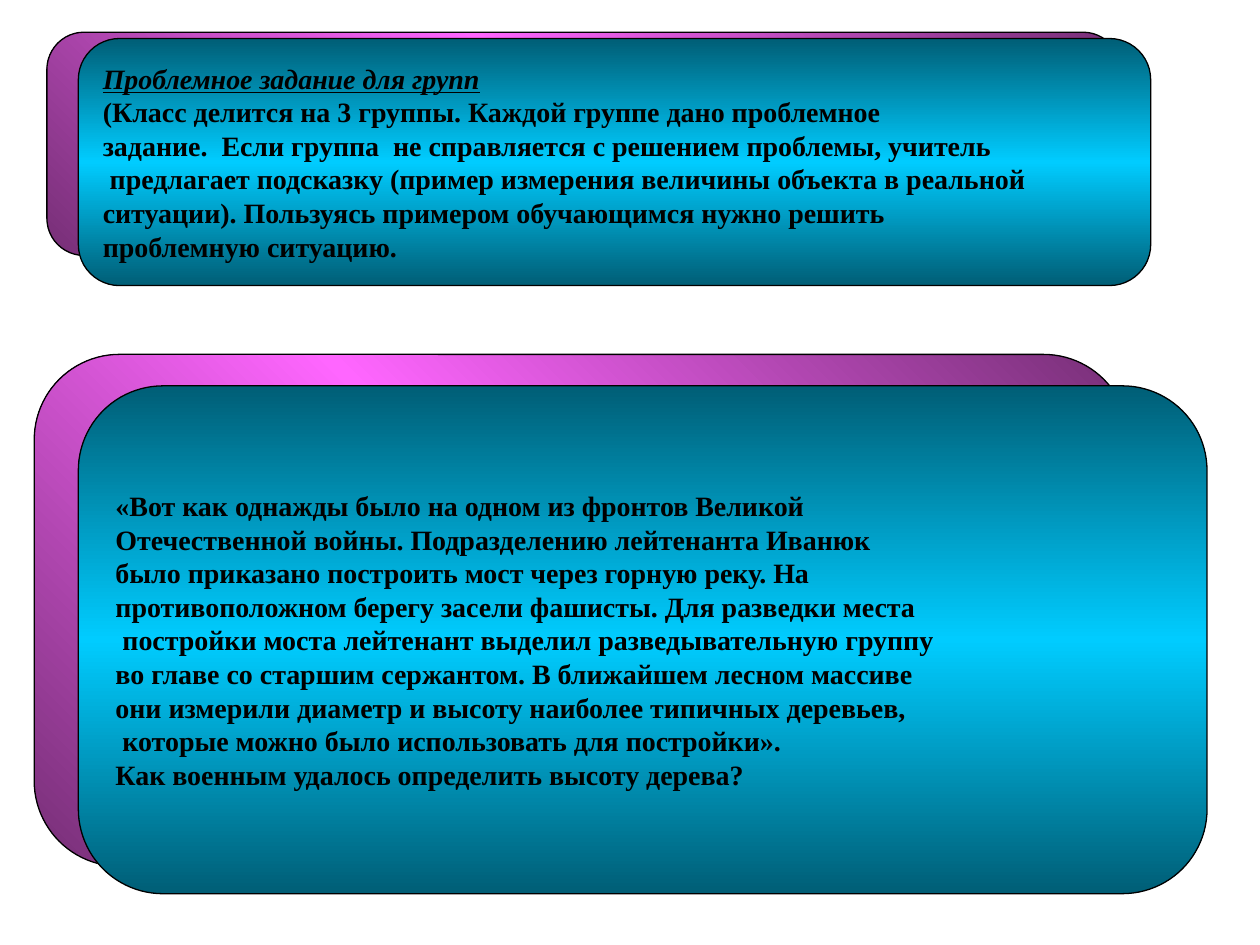
"""Build a slide with two layered gradient panels holding a group task."""
import copy

import pptx
import pptx.dml.color
import pptx.enum.shapes
import pptx.enum.text
import pptx.util

Pt = pptx.util.Pt


def colour(value):
    return pptx.dml.color.RGBColor.from_string(value)


deck = pptx.Presentation()
deck.slide_width, deck.slide_height = Pt(720), Pt(540)
slide = deck.slides.add_slide(deck.slide_layouts[6])

PINK = {"edge": "762F76", "middle": "FF66FF", "angle": 45}
BLUE = {"edge": "005E76", "middle": "00CCFF", "angle": 270}
FONT = {"name": "Times New Roman", "size": Pt(16), "bold": True}
HEADING = {"italic": True, "underline": True}

heading = "Проблемное задание для групп"
task_lines = [
    heading,
    "(Класс делится на 3 группы. Каждой группе дано проблемное",
    "задание.  Если группа  не справляется с решением проблемы, учитель",
    " предлагает подсказку (пример измерения величины объекта в реальной",
    "ситуации). Пользуясь примером обучающимся нужно решить",
    "проблемную ситуацию.",
]
story_lines = [
    "«Вот как однажды было на одном из фронтов Великой",
    "Отечественной войны. Подразделению лейтенанта Иванюк",
    "было приказано построить мост через горную реку. На",
    "противоположном берегу засели фашисты. Для разведки места",
    " постройки моста лейтенант выделил разведывательную группу",
    "во главе со старшим сержантом. В ближайшем лесном массиве",
    "они измерили диаметр и высоту наиболее типичных деревьев,",
    " которые можно было использовать для постройки».",
    "Как военным удалось определить высоту дерева?",
]
panels = [
    ((19.6, 202.5, 625.5, 292.5), PINK, []),
    ((26.8, 18.4, 613.4, 127.6), PINK, []),
    ((44.8, 22, 612.8, 141.2), BLUE, task_lines),
    ((44.8, 220.5, 645, 290.2), BLUE, story_lines),
]

for bounds, palette, lines in panels:
    panel = slide.shapes.add_shape(
        pptx.enum.shapes.MSO_SHAPE.FLOWCHART_ALTERNATE_PROCESS,
        *[Pt(length) for length in bounds])
    panel.shadow.inherit = False
    panel.line.color.rgb = colour("000000")
    panel.line.width = Pt(0.75)

    panel.fill.gradient()
    panel.fill.gradient_angle = palette["angle"]
    stop_list = panel.fill._fill._gradFill.gsLst
    stop_list.append(copy.deepcopy(stop_list[0]))
    for stop, position, shade in zip(panel.fill.gradient_stops, (0, 0.5, 1),
                                     ("edge", "middle", "edge")):
        stop.position = position
        stop.color.rgb = colour(palette[shade])

    frame = panel.text_frame
    frame.word_wrap = False
    frame.vertical_anchor = pptx.enum.text.MSO_ANCHOR.MIDDLE
    for index, line in enumerate(lines):
        para = frame.add_paragraph() if index else frame.paragraphs[0]
        para.alignment = pptx.enum.text.PP_ALIGN.LEFT
        span = para.add_run()
        span.text = line
        span.font.color.rgb = colour("000000")
        formats = FONT | HEADING if line == heading else FONT
        for name, value in formats.items():
            setattr(span.font, name, value)

deck.save("out.pptx")
